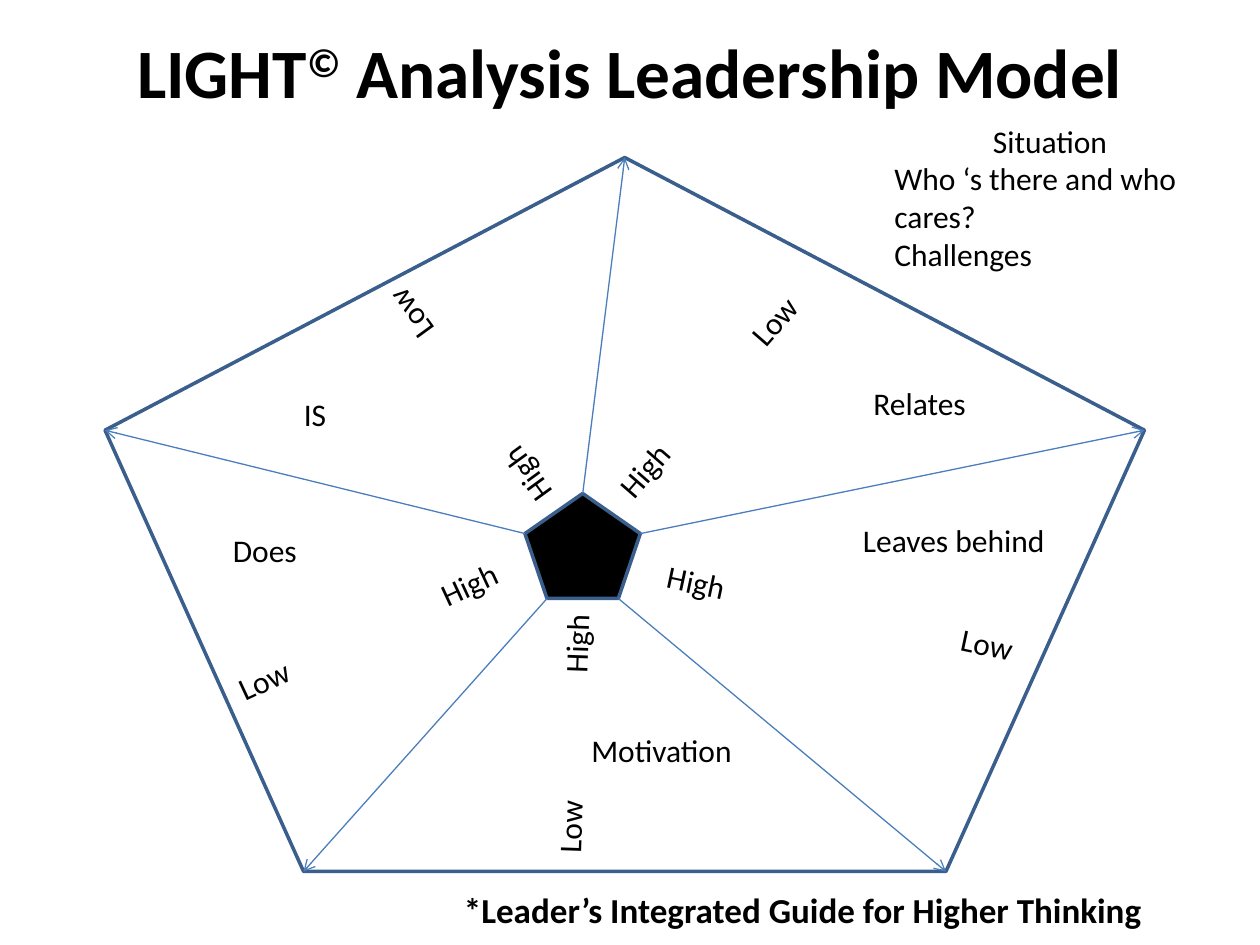
from lxml.etree import SubElement
from pptx import Presentation
from pptx.dml.color import RGBColor
from pptx.enum.shapes import MSO_CONNECTOR, MSO_SHAPE
from pptx.enum.text import MSO_ANCHOR, MSO_AUTO_SIZE, PP_ALIGN
from pptx.oxml.ns import qn
from pptx.util import Pt

BLACK, WHITE, OUTLINE, ARROW = "000000", "FFFFFF", "3A5F8C", "4B7EBC"
LEFT, CENTER = PP_ALIGN.LEFT, PP_ALIGN.CENTER
LABEL_HEIGHT = 29
OUTER_BOX = (60, 90, 594, 408)
CORE_BOX = (300, 282, 66, 60)
CORNERS = [(0.5, 0), (0, 0.382), (0.191, 1), (0.809, 1), (1, 0.382)]

AREA_LABELS = [
    ("IS", 120, 222, CENTER),
    ("Does", 126, 300, LEFT),
    ("Relates", 492, 216, LEFT),
    ("Leaves behind", 486, 294, LEFT),
    ("Motivation", 318, 414, CENTER),
]
SCALES = [
    ("High", "Low", (187.2, 211, 160.6), 234, 114.7),
    ("Low", "High", (122.4, 345.6, 177.8), 335, 127.6),
    ("Low", "High", (247.7, 400.3, 159.8), 272, 103.2),
    ("High", "Low", (323.3, 208.1, 169.2), 311, 114.7),
    ("High", "Low", (372.2, 336.2, 221.8), 12, 171.7),
]


def color(value):
    return RGBColor.from_string(value)


def set_font(run, size, bold=False):
    for name, value in {"name": "Calibri", "size": Pt(size), "bold": bold}.items():
        setattr(run.font, name, value)
    run.font.color.rgb = color(BLACK)


def add_text(slide, box, lines, size=18, bold=False):
    shape = slide.shapes.add_textbox(*map(Pt, box))
    frame = shape.text_frame
    frame.word_wrap = True
    frame.auto_size = MSO_AUTO_SIZE.SHAPE_TO_FIT_TEXT
    for index, (text, alignment) in enumerate(lines):
        paragraph = frame.add_paragraph() if index else frame.paragraphs[0]
        paragraph.alignment = alignment
        run = paragraph.add_run()
        run.text = text
        set_font(run, size, bold)
    return shape


def fill_title(slide, box):
    title = slide.shapes.title
    for name, value in zip(("left", "top", "width", "height"), box):
        setattr(title, name, Pt(value))
    frame = title.text_frame
    frame.vertical_anchor = MSO_ANCHOR.MIDDLE
    frame.auto_size = MSO_AUTO_SIZE.NONE
    paragraph = frame.paragraphs[0]
    paragraph.alignment = CENTER
    for text, baseline in [("LIGHT", 0), ("©", 30000), (" Analysis Leadership Model", 0)]:
        run = paragraph.add_run()
        run.text = text
        set_font(run, 39.6, True)
        if baseline:
            run.font._element.set("baseline", str(baseline))


def add_pentagon(slide, box, fill):
    shape = slide.shapes.add_shape(MSO_SHAPE.REGULAR_PENTAGON, *map(Pt, box))
    shape.shadow.inherit = False
    shape.fill.solid()
    shape.fill.fore_color.rgb = color(fill)
    shape.line.color.rgb = color(OUTLINE)
    shape.line.width = Pt(2)


def corner_points(box):
    left, top, width, height = box
    return [(left + x * width, top + y * height) for x, y in CORNERS]


def add_arrow(slide, start, end):
    connector = slide.shapes.add_connector(
        MSO_CONNECTOR.STRAIGHT, *(Pt(value) for value in start + end))
    connector.line.color.rgb = color(ARROW)
    connector.line.width = Pt(0.75)
    properties = connector._element.spPr
    SubElement(properties.find(qn("a:ln")), qn("a:tailEnd"), type="arrow")
    SubElement(properties, qn("a:effectLst"))


def add_model(slide, outer_box, core_box):
    add_pentagon(slide, outer_box, WHITE)
    add_pentagon(slide, core_box, BLACK)
    for start, end in zip(corner_points(core_box), corner_points(outer_box)):
        add_arrow(slide, start, end)


def add_scale(slide, first, second, box, rotation, second_start):
    shape = add_text(slide, (*box, LABEL_HEIGHT), [(f"{first}\t{second}", LEFT)])
    shape.rotation = rotation
    properties = shape.text_frame.paragraphs[0]._p.get_or_add_pPr()
    tabs = SubElement(properties, qn("a:tabLst"))
    SubElement(tabs, qn("a:tab"), pos=str(int(Pt(second_start))), algn="l")


def main():
    presentation = Presentation()
    presentation.slide_width, presentation.slide_height = Pt(720), Pt(540)
    slide = presentation.slides.add_slide(presentation.slide_layouts[5])
    fill_title(slide, (36, 18, 648, 45))
    add_model(slide, OUTER_BOX, CORE_BOX)
    for text, left, top, alignment in AREA_LABELS:
        add_text(slide, (left, top, 120, LABEL_HEIGHT), [(text, alignment)])
    add_text(slide, (504, 66, 192, 94), [
        ("Situation", CENTER),
        ("Who ‘s there and who cares?", LEFT),
        ("Challenges", LEFT),
    ])
    for scale in SCALES:
        add_scale(slide, *scale)
    add_text(slide, (258, 504, 438, 31.5),
             [("*Leader’s Integrated Guide for Higher Thinking", LEFT)], 20, True)
    presentation.save("out.pptx")


if __name__ == "__main__":
    main()
